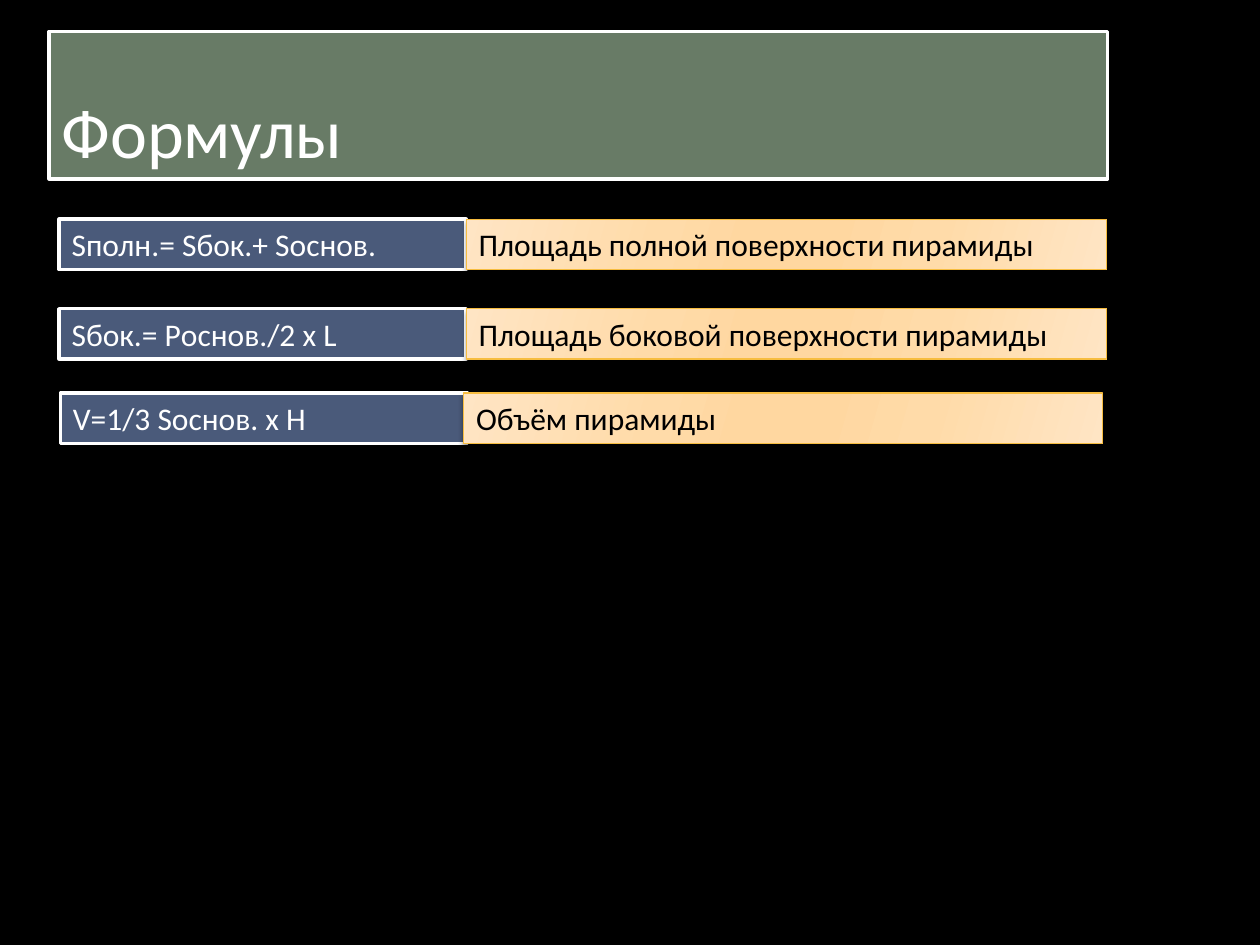
"""Build a slide listing the pyramid formulas."""
from pptx import Presentation
from pptx import util as u
from pptx.dml.color import RGBColor
from pptx.enum import shapes, text
from pptx.oxml import parse_xml
from pptx.oxml.ns import nsdecls, qn

COLORS = {
    "black": "000000",
    "white": "FFFFFF",
    "title": "687B66",
    "formula": "4A5A7A",
    "gold": "F7BD40",
    "edge": "FFE5C4",
    "mid": "FFDBA9",
    "center": "FFD7A0",
}
STOPS = [(0, "edge"), (30, "mid"), (45, "center"),
         (55, "center"), (73, "mid"), (100, "edge")]
ROW_H = 0.4
ROWS = [
    (1.74, 0.47, "Sполн.= Sбок.+ Sоснов.",
     3.7, 5.08, "Площадь полной поверхности пирамиды"),
    (2.45, 0.47, "Sбок.= Pоснов./2 x L",
     3.7, 5.08, "Площадь боковой поверхности пирамиды"),
    (3.12, 0.48, "V=1/3 Sоснов. x H",
     3.68, 5.07, "Объём пирамиды"),
]


def rgb(name):
    return RGBColor.from_string(COLORS[name])


def add_shadow(sp):
    sp.shadow.inherit = False
    effects = sp._element.spPr.find(qn("a:effectLst"))
    effects.append(parse_xml(
        f'<a:outerShdw {nsdecls("a")} blurRad="{u.Pt(3)}" dist="{u.Pt(2)}"'
        ' dir="5400000" rotWithShape="0">'
        f'<a:srgbClr val="{COLORS["black"]}"><a:alpha val="40000"/></a:srgbClr>'
        '</a:outerShdw>'))


def fill_gradient(sp):
    sp.fill.gradient()
    sp.fill.gradient_angle = 344
    stops = sp._element.spPr.find(qn("a:gradFill")).find(qn("a:gsLst"))
    for stop in list(stops):
        stops.remove(stop)
    for pos, name in STOPS:
        stops.append(parse_xml(
            f'<a:gs {nsdecls("a")} pos="{pos * 1000}">'
            f'<a:srgbClr val="{COLORS[name]}"/></a:gs>'))


def add_box(s, box, label, size, color, line, width):
    sp = s.shapes.add_shape(shapes.MSO_SHAPE.RECTANGLE, *map(u.Inches, box))
    sp.line.color.rgb = rgb(line)
    sp.line.width = u.Pt(width)
    add_shadow(sp)
    tf = sp.text_frame
    tf.word_wrap = True
    tf.vertical_anchor = text.MSO_ANCHOR.TOP
    p = tf.paragraphs[0]
    p.text = label
    p.alignment = text.PP_ALIGN.LEFT
    p.font.name = "Calibri"
    p.font.size = u.Pt(size)
    p.font.color.rgb = rgb(color)
    return sp


def add_title(s, label):
    sp = add_box(s, (0.39, 0.25, 8.4, 1.17), label, 40, "white", "white", 2)
    sp.fill.solid()
    sp.fill.fore_color.rgb = rgb("title")
    sp.text_frame.vertical_anchor = text.MSO_ANCHOR.BOTTOM
    sp.text_frame.paragraphs[0].space_before = u.Pt(4)


def add_formula(s, left, top, label):
    sp = add_box(s, (left, top, 3.23, ROW_H), label, 18, "white", "white", 2)
    sp.fill.solid()
    sp.fill.fore_color.rgb = rgb("formula")
    sp.text_frame.auto_size = text.MSO_AUTO_SIZE.SHAPE_TO_FIT_TEXT


def add_meaning(s, left, top, width, label):
    sp = add_box(s, (left, top, width, ROW_H), label, 18, "black", "gold", 0.75)
    fill_gradient(sp)
    sp.text_frame.auto_size = text.MSO_AUTO_SIZE.SHAPE_TO_FIT_TEXT


def main():
    prs = Presentation()
    prs.slide_width, prs.slide_height = u.Inches(10), u.Inches(7.5)
    s = prs.slides.add_slide(prs.slide_layouts[6])
    s.background.fill.solid()
    s.background.fill.fore_color.rgb = rgb("black")
    add_title(s, "Формулы")
    for top, left, formula, meaning_left, meaning_width, meaning in ROWS:
        add_formula(s, left, top, formula)
        add_meaning(s, meaning_left, top, meaning_width, meaning)
    prs.save("out.pptx")


if __name__ == "__main__":
    main()
